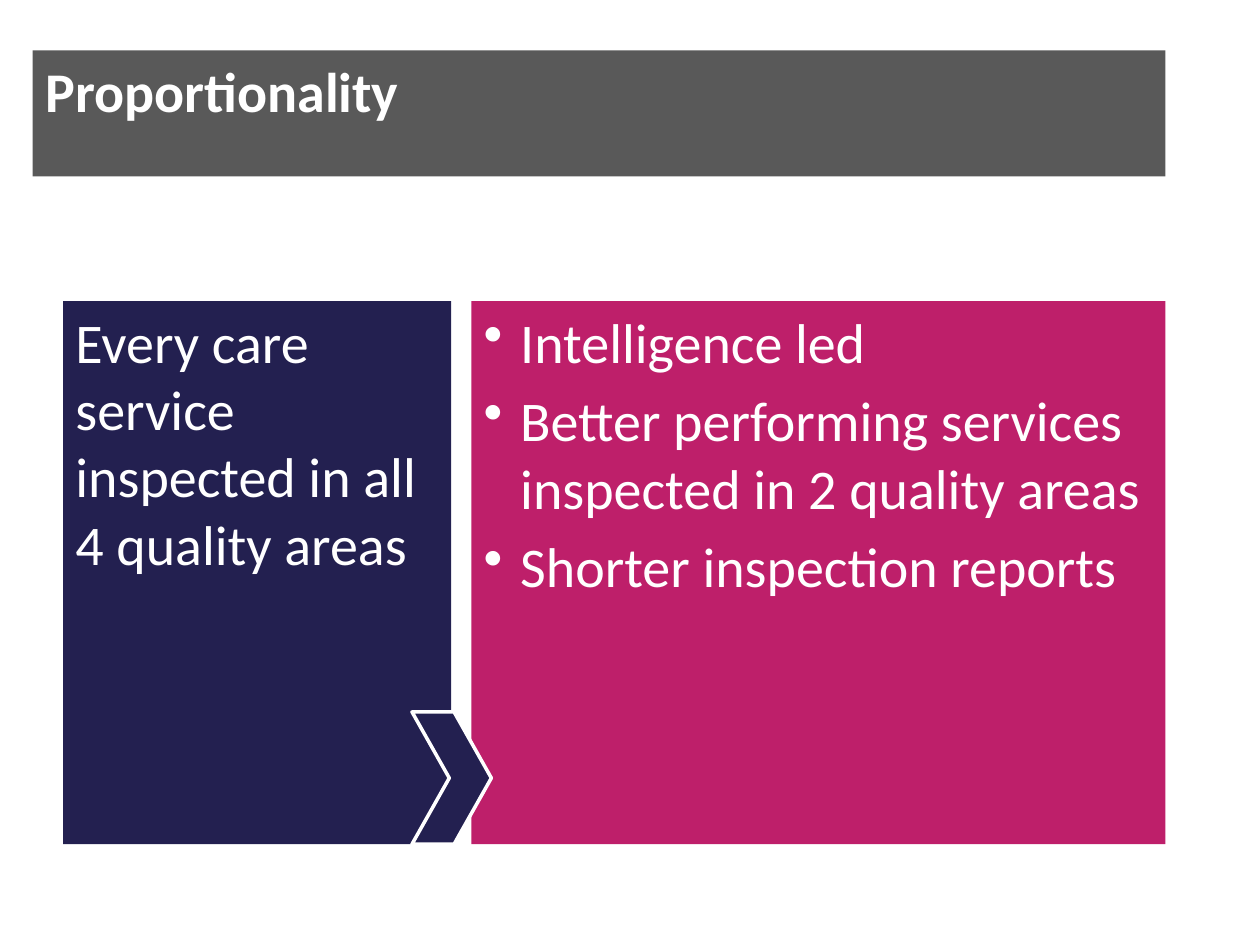
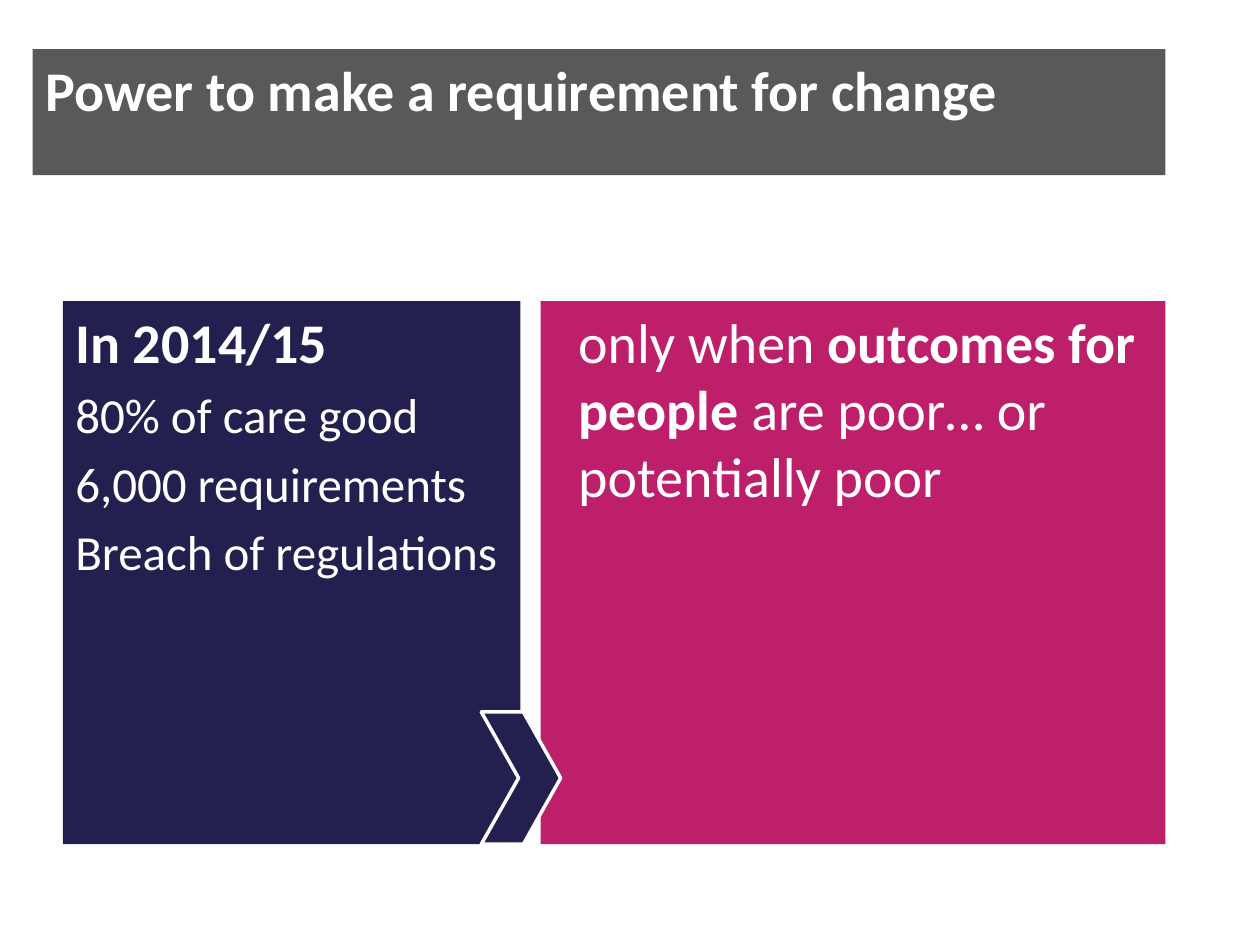
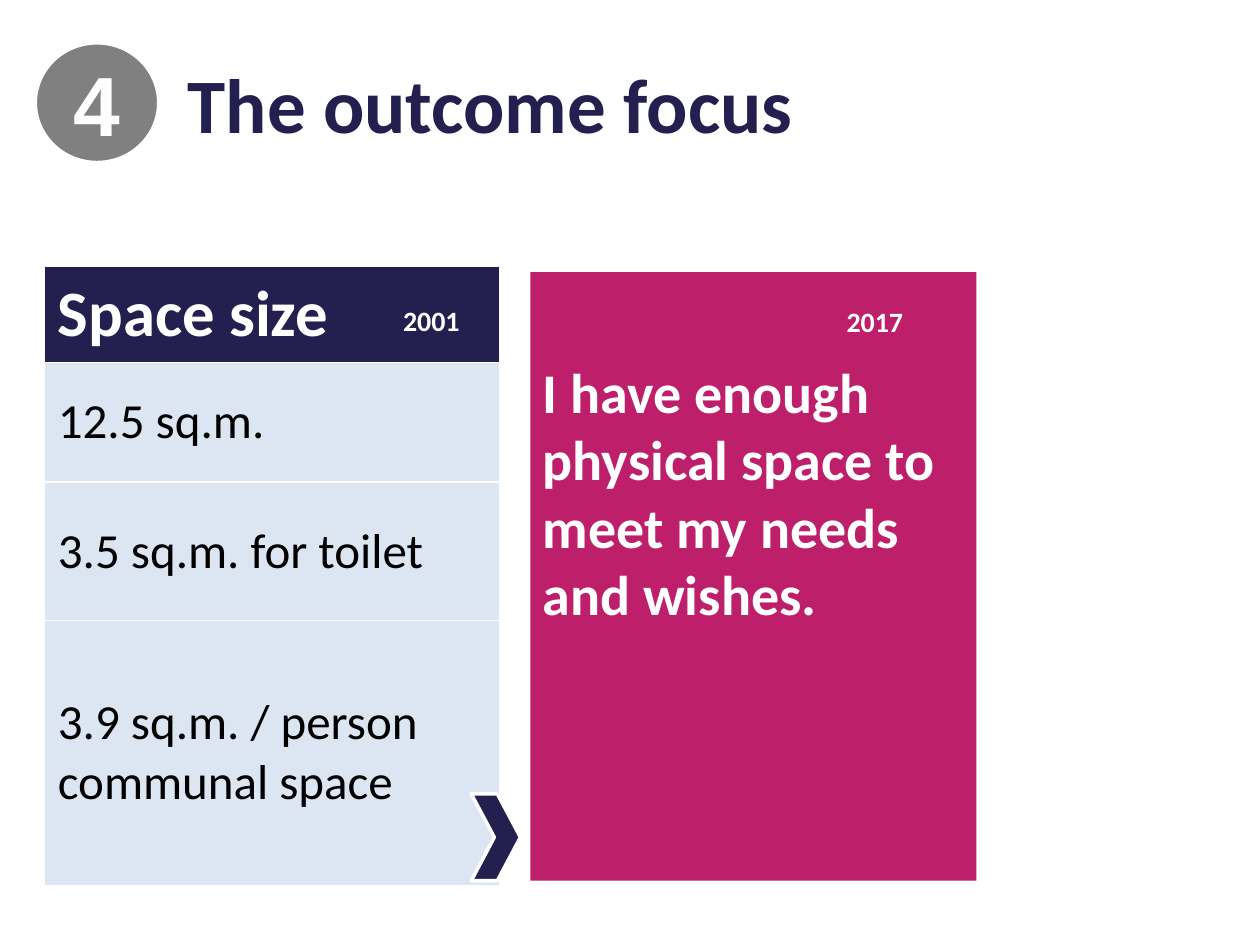
import pptx
import pptx.dml.color
import pptx.enum.shapes
import pptx.enum.text
import pptx.oxml
import pptx.oxml.ns
import pptx.util
from pptx.util import Inches

SHAPE = pptx.enum.shapes.MSO_SHAPE
ANCHOR = pptx.enum.text.MSO_ANCHOR
ALIGN = pptx.enum.text.PP_ALIGN
NAVY, PINK, BAND, GREY = "232050", "BE1F6A", "595959", "808080"
PALE, WHITE, BLACK = "DCE6F2", "FFFFFF", "000000"


def rgb(value):
    return pptx.dml.color.RGBColor.from_string(value)


def paint(target, value):
    target.fill.solid()
    target.fill.fore_color.rgb = rgb(value)


class Deck:
    font = "Calibri"
    panel_left, panel_top, panel_height = 0.5, 2.39, 4.31
    right_edge, panel_gap = 9.25, 0.16

    def __init__(self):
        self.prs = pptx.Presentation()
        self.prs.slide_width = Inches(10)
        self.prs.slide_height = Inches(7.5)
        self.slide = None

    def add_slide(self):
        self.slide = self.prs.slides.add_slide(self.prs.slide_layouts[5])

    def format_run(self, r, size, color, bold, font=None):
        r.font.name = font or self.font
        r.font.size = pptx.util.Pt(size)
        r.font.bold = bold
        r.font.color.rgb = rgb(color)

    def fill_text(self, tf, paragraphs, size=32, color=WHITE, bold=False,
                  anchor=ANCHOR.TOP, align=ALIGN.LEFT, font=None, indent=0, bullet=False):
        tf.word_wrap = True
        tf.auto_size = pptx.enum.text.MSO_AUTO_SIZE.NONE
        tf.vertical_anchor = anchor
        for i, runs in enumerate(paragraphs):
            p = tf.add_paragraph() if i else tf.paragraphs[0]
            p.alignment = align
            if isinstance(runs, str):
                runs = [(runs, size, bold)]
            if i:
                p.space_before = pptx.util.Pt(runs[0][1] * 0.2)
            if indent:
                pPr = p._p.get_or_add_pPr()
                pPr.set("marL", str(Inches(indent)))
                pPr.set("indent", str(-Inches(indent) if bullet else 0))
                if bullet:
                    bu = pptx.oxml.ns.qn("a:buChar")
                    pPr.append(pPr.makeelement(bu, {"char": "•"}))
            for text, run_size, run_bold in runs:
                r = p.add_run()
                r.text = text
                self.format_run(r, run_size, color, run_bold, font)

    def title(self, text, left, top, width, height, size, color, anchor):
        sp = self.slide.shapes.title
        sp.left, sp.top = Inches(left), Inches(top)
        sp.width, sp.height = Inches(width), Inches(height)
        self.fill_text(sp.text_frame, [text], size, color, True, anchor)
        return sp

    def band_title(self, text, top):
        sp = self.title(text, 0.26, top, 8.99, 1, 32, WHITE, ANCHOR.TOP)
        paint(sp, BAND)

    def shape(self, kind, left, top, width, height, fill, outlined=False):
        sp = self.slide.shapes.add_shape(
            kind, Inches(left), Inches(top), Inches(width), Inches(height))
        sp.shadow.inherit = False
        paint(sp, fill)
        if outlined:
            sp.line.color.rgb = rgb(WHITE)
            sp.line.width = pptx.util.Pt(2)
        else:
            sp.line.fill.background()
        return sp

    def panel(self, left, top, width, height, fill, paragraphs, **style):
        sp = self.shape(SHAPE.RECTANGLE, left, top, width, height, fill)
        self.fill_text(sp.text_frame, paragraphs, **style)
        return sp

    def chevron(self, left, top, width, height):
        sp = self.shape(SHAPE.CHEVRON, left, top, width, height, NAVY, True)
        sp.adjustments[0] = 0.47

    def comparison(self, before, before_width, after, **after_style):
        split = self.panel_left + before_width
        after_left = split + self.panel_gap
        self.panel(self.panel_left, self.panel_top, before_width, self.panel_height,
                   NAVY, before)
        self.panel(after_left, self.panel_top, self.right_edge - after_left,
                   self.panel_height, PINK, after, **after_style)
        self.chevron(split - 0.31, 5.65, 0.63, 1.05)

    def badge(self, text, left, top, width, height):
        sp = self.shape(SHAPE.OVAL, left, top, width, height, GREY, True)
        self.fill_text(sp.text_frame, [text], 48, bold=True, anchor=ANCHOR.MIDDLE,
                       align=ALIGN.CENTER, font="Arial")

    def year(self, text, left, top):
        sp = self.slide.shapes.add_textbox(
            Inches(left), Inches(top), Inches(0.72), Inches(0.5))
        self.fill_text(sp.text_frame, [text], 16, bold=True, anchor=ANCHOR.MIDDLE)

    def cell_borders(self, cell):
        tcPr = cell._tc.get_or_add_tcPr()
        for i, side in enumerate(("lnL", "lnR", "lnT", "lnB")):
            tcPr.insert(i, pptx.oxml.parse_xml(
                f'<a:{side} {pptx.oxml.ns.nsdecls("a")} w="12700"><a:solidFill>'
                f'<a:srgbClr val="{WHITE}"/></a:solidFill></a:{side}>'))

    def table(self, left, top, width, rows):
        heights = [height for _, height in rows]
        table = self.slide.shapes.add_table(
            len(rows), 1, Inches(left), Inches(top), Inches(width),
            Inches(sum(heights))).table
        for i, (text, height) in enumerate(rows):
            table.rows[i].height = Inches(height)
            cell = table.cell(i, 0)
            cell.text = text
            cell.vertical_anchor = ANCHOR.MIDDLE
            cell.margin_left = cell.margin_right = Inches(0.11)
            cell.margin_top = cell.margin_bottom = Inches(0.07)
            paint(cell, PALE if i else NAVY)
            self.cell_borders(cell)
            self.format_run(cell.text_frame.paragraphs[0].runs[0], 28 if i else 37,
                            BLACK if i else WHITE, i == 0)


def main():
    deck = Deck()

    deck.add_slide()
    deck.band_title("Proportionality", 0.4)
    deck.comparison(
        ["Every care service inspected in all 4 quality areas"], 3.08,
        ["Intelligence led",
         "Better performing services inspected in 2 quality areas",
         "Shorter inspection reports"],
        indent=0.29, bullet=True)

    deck.add_slide()
    deck.band_title("Power to make a requirement for change", 0.39)
    facts = ["80% of care good", "6,000 requirements", "Breach of regulations"]
    deck.comparison(
        [[("In 2014/15", 32, True)]] + [[(fact, 28, False)] for fact in facts], 3.63,
        [[("only when ", 32, False), ("outcomes for people", 32, True),
          (" are poor… or potentially poor", 32, False)]],
        indent=0.2)

    deck.add_slide()
    deck.title("The outcome focus", 1.39, 0, 8.5, 1.63, 44, NAVY, ANCHOR.MIDDLE)
    deck.table(0.35, 2.11, 3.62, [
        ("Space size", 0.76),
        ("12.5 sq.m.", 0.95),
        ("3.5 sq.m. for toilet", 1.1),
        ("3.9 sq.m. / person communal space", 2.1),
    ])
    deck.badge("4", 0.28, 0.34, 0.98, 0.95)
    sp = deck.panel(4.21, 2.16, 3.54, 4.83, PINK,
                    ["I have enough physical space to meet my needs and wishes."],
                    bold=True)
    sp.text_frame.margin_top = Inches(0.68)
    deck.chevron(3.74, 6.3, 0.39, 0.69)
    deck.year("2001", 3.1, 2.29)
    deck.year("2017", 6.62, 2.3)

    deck.prs.save("out.pptx")


if __name__ == "__main__":
    main()
